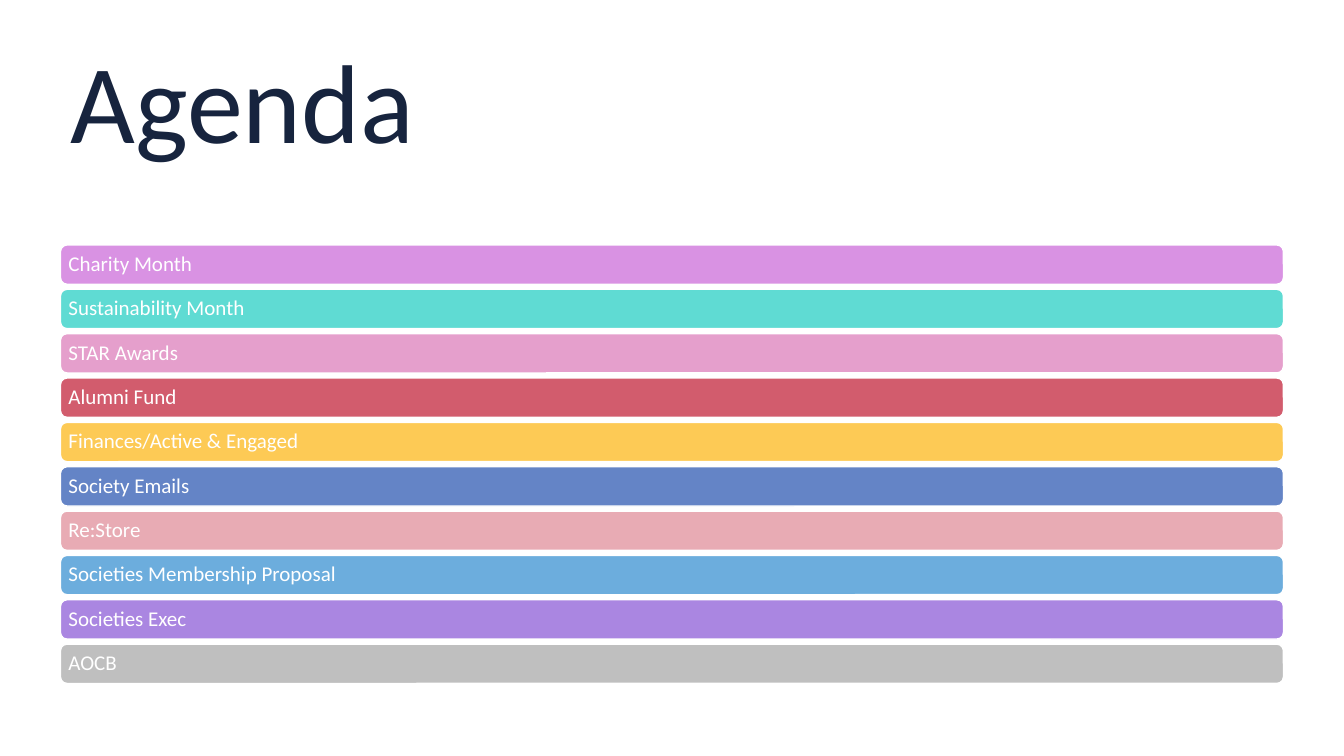
from pptx import Presentation
from pptx.dml.color import RGBColor
from pptx.enum.shapes import MSO_SHAPE as Shape
from pptx.enum.text import MSO_ANCHOR as Anchor, MSO_AUTO_SIZE as AutoSize, PP_ALIGN as Align
from pptx.util import Inches, Pt

TITLE = "Agenda"
AGENDA = [
    ("Charity Month", "D992E3"),
    ("Sustainability Month", "5FDBD3"),
    ("STAR Awards", "E59FCC"),
    ("Alumni Fund", "D25C6D"),
    ("Finances/Active & Engaged", "FDCA55"),
    ("Society Emails", "6484C6"),
    ("Re:Store", "E8ABB4"),
    ("Societies Membership Proposal", "6CADDD"),
    ("Societies Exec", "AA86E1"),
    ("AOCB", "BFBFBF"),
]
NAVY, WHITE = "17243E", "FFFFFF"
FONT = "Calibri"
LEFT, WIDTH = 0.6, 12.13
FIRST_TOP, BAR_HEIGHT, BAR_STEP = 2.43, 0.39, 0.44
BAR_INSET = 0.06


def color(hex_code):
    return RGBColor.from_string(hex_code)


def set_text(box, text, size, hex_code):
    """Write one left-aligned, vertically centred line."""
    frame = box.text_frame
    frame.text = text
    frame.word_wrap = True
    frame.auto_size = AutoSize.NONE
    frame.vertical_anchor = Anchor.MIDDLE
    para = frame.paragraphs[0]
    para.alignment = Align.LEFT
    para.line_spacing = 0.9
    font = para.runs[0].font
    font.name = FONT
    font.size = Pt(size)
    font.color.rgb = color(hex_code)


def add_bar(page, top, text, fill):
    bar = page.shapes.add_shape(
        Shape.ROUNDED_RECTANGLE, Inches(LEFT), Inches(top), Inches(WIDTH), Inches(BAR_HEIGHT))
    bar.shadow.inherit = False
    bar.fill.solid()
    bar.fill.fore_color.rgb = color(fill)
    bar.line.color.rgb = color(WHITE)
    bar.line.width = Pt(1)
    frame = bar.text_frame
    frame.margin_left = frame.margin_right = Inches(BAR_INSET)
    frame.margin_top = frame.margin_bottom = Inches(BAR_INSET)
    set_text(bar, text, 15, WHITE)


def main():
    deck = Presentation()
    deck.slide_width, deck.slide_height = Inches(13.33), Inches(7.5)
    page = deck.slides.add_slide(deck.slide_layouts[5])

    title = page.shapes.title
    title.left, title.top = Inches(LEFT), Inches(0.34)
    title.width, title.height = Inches(WIDTH), Inches(1.45)
    set_text(title, TITLE, 80, NAVY)

    for index, (text, fill) in enumerate(AGENDA):
        add_bar(page, FIRST_TOP + index * BAR_STEP, text, fill)

    deck.save("out.pptx")


if __name__ == "__main__":
    main()
